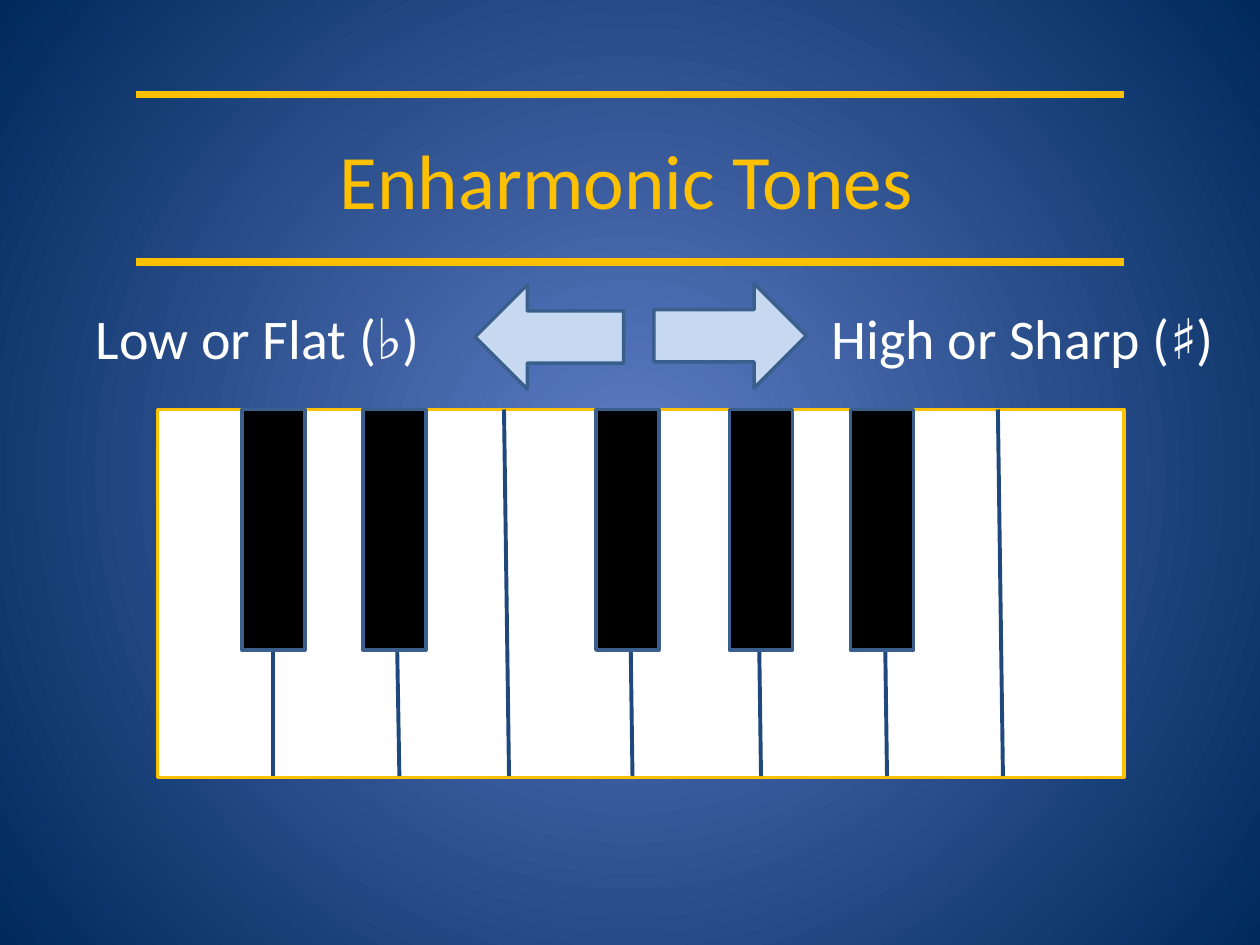
from lxml.etree import SubElement
from pptx import Presentation
from pptx.dml.color import RGBColor
from pptx.enum.shapes import MSO_CONNECTOR as Connector, MSO_SHAPE as Shape
from pptx.enum.text import MSO_AUTO_SIZE as AutoSize
from pptx.oxml.ns import qn
from pptx.util import Inches, Pt

GOLD = RGBColor(0xFF, 0xC0, 0x00)
WHITE = RGBColor(0xFF, 0xFF, 0xFF)
BLACK = RGBColor(0x00, 0x00, 0x00)
NAVY = RGBColor(0x1F, 0x49, 0x7D)
STEEL = RGBColor(0x3A, 0x5F, 0x8C)
PALE_BLUE = RGBColor(0xC6, 0xD9, 0xF1)
GLOW = RGBColor(0x5E, 0x7C, 0xC5)
DEEP_BLUE = RGBColor(0x00, 0x29, 0x5C)

WHITE_KEY_EDGES = [(0.92, 0.92), (1.87, 1.92), (2.75, 2.79), (3.73, 3.77),
                   (4.75, 4.79), (5.75, 5.79), (6.67, 6.71)]
BLACK_KEY_LEFTS = [0.67, 1.63, 3.48, 4.54, 5.5]


def paint_background(slide):
    fill = slide.background.fill
    fill.gradient()
    for stop, color in zip(fill.gradient_stops, (GLOW, DEEP_BLUE)):
        stop.color.rgb = color
    gradient = slide.element.find(".//" + qn("a:gradFill"))
    gradient.remove(gradient.find(qn("a:lin")))
    radial = SubElement(gradient, qn("a:path"), path="circle")
    SubElement(radial, qn("a:fillToRect"), l="50000", t="50000", r="50000", b="50000")


def add_line(shapes, x1, y1, x2, y2, color, weight):
    line = shapes.add_connector(Connector.STRAIGHT, Inches(x1), Inches(y1),
                                Inches(x2), Inches(y2))
    line.line.color.rgb = color
    line.line.width = Pt(weight)
    SubElement(line.element.spPr, qn("a:effectLst"))


def add_block(shapes, kind, left, top, width, height, fill, outline):
    block = shapes.add_shape(kind, Inches(left), Inches(top), Inches(width), Inches(height))
    block.shadow.inherit = False
    block.fill.solid()
    block.fill.fore_color.rgb = fill
    block.line.color.rgb = outline
    block.line.width = Pt(2)


def add_label(shapes, text, left, top, width, height, size, color, wrap=False):
    label = shapes.add_textbox(Inches(left), Inches(top), Inches(width), Inches(height))
    frame = label.text_frame
    frame.text = text
    frame.word_wrap = wrap
    frame.auto_size = AutoSize.SHAPE_TO_FIT_TEXT
    font = frame.paragraphs[0].runs[0].font
    font.name = "Calibri"
    font.size = Pt(size)
    font.color.rgb = color


def add_title(slide, left, top, width, height):
    for y in (top, top + height):
        add_line(slide.shapes, left, y, left + width, y, GOLD, 4.5)
    add_label(slide.shapes, "Enharmonic Tones", left + 1.52, top + 0.25, 4.8, 0.84, 44, GOLD)


def add_keyboard(slide, left, top, width, height):
    keys = slide.shapes.add_group_shape().shapes
    add_block(keys, Shape.RECTANGLE, left, top, width, height, WHITE, GOLD)
    for upper, lower in WHITE_KEY_EDGES:
        add_line(keys, left + upper, top, left + lower, top + height - 0.01, NAVY, 2.25)
    for offset in BLACK_KEY_LEFTS:
        add_block(keys, Shape.RECTANGLE, left + offset, top, 0.5, 1.91, BLACK, STEEL)


def add_directions(slide, left, top):
    shapes = slide.shapes
    add_block(shapes, Shape.LEFT_ARROW, left + 3.11, top + 0.01, 1.18, 0.83, PALE_BLUE, STEEL)
    add_block(shapes, Shape.RIGHT_ARROW, left + 4.53, top, 1.21, 0.83, PALE_BLUE, STEEL)
    add_label(shapes, "Low or Flat (♭)", left, top + 0.11, 3.11, 0.64, 32, WHITE, wrap=True)
    add_label(shapes, "High or Sharp (♯)", left + 5.84, top + 0.11, 3.28, 0.64, 32, WHITE)


def main():
    deck = Presentation()
    deck.slide_width = Inches(10)
    deck.slide_height = Inches(7.5)
    slide = deck.slides.add_slide(deck.slide_layouts[6])
    paint_background(slide)
    add_title(slide, 1.08, 0.75, 7.84, 1.33)
    add_keyboard(slide, 1.25, 3.25, 7.67, 2.92)
    add_directions(slide, 0.66, 2.25)
    deck.save("out.pptx")


if __name__ == "__main__":
    main()
